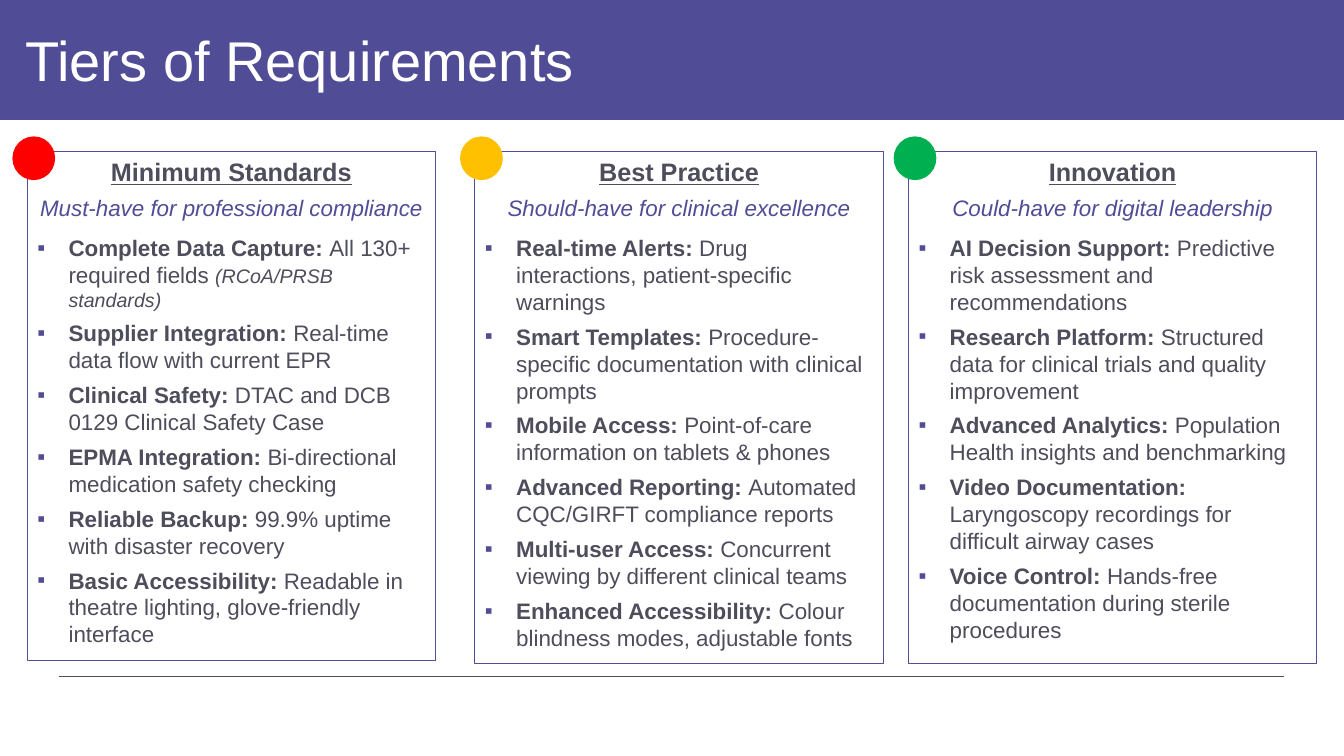
from lxml.etree import SubElement
from pptx import Presentation
from pptx.dml.color import RGBColor
from pptx.enum.shapes import MSO_CONNECTOR, MSO_SHAPE
from pptx.enum.text import MSO_ANCHOR, MSO_AUTO_SIZE, PP_ALIGN
from pptx.oxml.ns import qn
from pptx.util import Inches, Pt

PURPLE, GREY, WHITE = "504C96", "4D4D5B", "FFFFFF"
TITLE_SIZE, HEADING_SIZE, TEXT_SIZE, NOTE_SIZE = 40, 18, 16, 14
COLUMN_TOP, COLUMN_WIDTH = 1.5, 4.05
GAP, LIST_GAP = 5.75, 9.2

# Each column: left, height, light colour, heading, subtitle, items (label, text, optional note)
COLUMNS = [
    (0.27, 5.05, "FF0000", "Minimum Standards", "Must-have for professional compliance", [
        ("Complete Data Capture: ", "All 130+ required fields ", "(RCoA/PRSB standards)"),
        ("Supplier Integration: ", "Real-time data flow with current EPR"),
        ("Clinical Safety: ", "DTAC and DCB 0129 Clinical Safety Case"),
        ("EPMA Integration: ", "Bi-directional medication safety checking"),
        ("Reliable Backup: ", "99.9% uptime with disaster recovery"),
        ("Basic Accessibility: ", "Readable in theatre lighting, glove-friendly interface"),
    ]),
    (4.71, 5.08, "FFC000", "Best Practice", "Should-have for clinical excellence", [
        ("Real-time Alerts: ", "Drug interactions, patient-specific warnings"),
        ("Smart Templates: ", "Procedure-specific documentation with clinical prompts"),
        ("Mobile Access: ", "Point-of-care information on tablets & phones"),
        ("Advanced Reporting: ", "Automated CQC/GIRFT compliance reports"),
        ("Multi-user Access: ", "Concurrent viewing by different clinical teams"),
        ("Enhanced Accessibility: ", "Colour blindness modes, adjustable fonts"),
    ]),
    (9.01, 5.08, "00B050", "Innovation", "Could-have for digital leadership", [
        ("AI Decision Support: ", "Predictive risk assessment and recommendations"),
        ("Research Platform: ", "Structured data for clinical trials and quality improvement"),
        ("Advanced Analytics: ", "Population Health insights and benchmarking"),
        ("Video Documentation: ", "Laryngoscopy recordings for difficult airway cases"),
        ("Voice Control: ", "Hands-free documentation during sterile procedures"),
    ]),
]

HEADING = {"size": Pt(HEADING_SIZE), "bold": True, "underline": True}
SUBTITLE = {"size": Pt(TEXT_SIZE), "bold": False, "italic": True}
ITEM_STYLES = [
    {"size": Pt(TEXT_SIZE), "bold": True},
    {"size": Pt(TEXT_SIZE), "bold": False},
    {"size": Pt(NOTE_SIZE), "bold": False, "italic": True},
]


def colour(value):
    return RGBColor.from_string(value)


def paint(shape, fill, line, width):
    if fill:
        shape.fill.solid()
        shape.fill.fore_color.rgb = colour(fill)
    else:
        shape.fill.background()
    shape.line.color.rgb = colour(line)
    shape.line.width = Pt(width)


def place(shape, left, top, width, height):
    shape.left, shape.top = Inches(left), Inches(top)
    shape.width, shape.height = Inches(width), Inches(height)


def add_span(para, text, text_colour, styles):
    span = para.add_run()
    span.text = text
    span.font.name = "Arial"
    span.font.color.rgb = colour(text_colour)
    for name, value in styles.items():
        setattr(span.font, name, value)


def set_bullet(para, shown):
    """Give the paragraph a hanging square bullet, or switch the inherited one off."""
    properties = para._p.get_or_add_pPr()
    indent = Inches(0.31) if shown else 0
    properties.set("marL", str(indent))
    properties.set("indent", str(-indent))
    if not shown:
        SubElement(properties, qn("a:buNone"))
        return
    bullet_colour = SubElement(properties, qn("a:buClr"))
    SubElement(bullet_colour, qn("a:srgbClr"), val=PURPLE)
    SubElement(properties, qn("a:buFont"), typeface="Arial")
    SubElement(properties, qn("a:buChar"), char="▪")


def add_para(frame, first=False, bullet=False, before=0):
    para = frame.paragraphs[0] if first else frame.add_paragraph()
    set_bullet(para, bullet)
    settings = {
        "alignment": PP_ALIGN.LEFT if bullet else PP_ALIGN.CENTER,
        "line_spacing": 1.0,
        "space_before": Pt(before),
        "space_after": Pt(0),
    }
    for name, value in settings.items():
        setattr(para, name, value)
    return para


def build_title(title, left, top, width, height):
    place(title, left, top, width, height)
    paint(title, PURPLE, PURPLE, 1)
    frame = title.text_frame
    frame.auto_size = MSO_AUTO_SIZE.NONE
    frame.vertical_anchor = MSO_ANCHOR.MIDDLE
    frame.margin_left = Inches(0.25)
    para = frame.paragraphs[0]
    para.alignment = PP_ALIGN.LEFT
    add_span(para, "Tiers of Requirements", WHITE, {"size": Pt(TITLE_SIZE)})


def build_column(page, box, left, top, width, height, light_colour, heading, subtitle, items):
    place(box, left, top, width, height)
    paint(box, None, PURPLE, 0.75)
    frame = box.text_frame
    frame.word_wrap = True
    frame.auto_size = MSO_AUTO_SIZE.NONE
    frame.vertical_anchor = MSO_ANCHOR.TOP

    add_span(add_para(frame, first=True), heading, GREY, HEADING)
    add_span(add_para(frame, before=GAP), subtitle, PURPLE, SUBTITLE)
    for number, item in enumerate(items):
        para = add_para(frame, bullet=True, before=GAP if number else LIST_GAP)
        for text, styles in zip(item, ITEM_STYLES):
            add_span(para, text, GREY, styles)

    light = page.shapes.add_shape(
        MSO_SHAPE.OVAL, Inches(left - 0.14), Inches(top - 0.14), Inches(0.41), Inches(0.42))
    light.shadow.inherit = False
    paint(light, light_colour, light_colour, 1)


def build_footer_rule(page, left, right, top):
    rule = page.shapes.add_connector(
        MSO_CONNECTOR.STRAIGHT, Inches(left), Inches(top), Inches(right), Inches(top))
    rule.line.color.rgb = colour(GREY)
    rule.line.width = Pt(0.25)
    SubElement(rule._element.spPr, qn("a:effectLst"))


def main():
    deck = Presentation()
    deck.slide_width, deck.slide_height = Inches(13.33), Inches(7.5)
    page = deck.slides.add_slide(deck.slide_layouts.get_by_name("Comparison"))
    title, *bodies = page.placeholders
    spare = bodies.pop()
    spare._element.getparent().remove(spare._element)

    build_footer_rule(page, 0.59, 12.74, 6.71)
    build_title(title, 0, 0, 13.33, 1.18)
    for box, (left, height, *content) in zip(bodies, COLUMNS):
        build_column(page, box, left, COLUMN_TOP, COLUMN_WIDTH, height, *content)
    deck.save("out.pptx")


if __name__ == "__main__":
    main()
